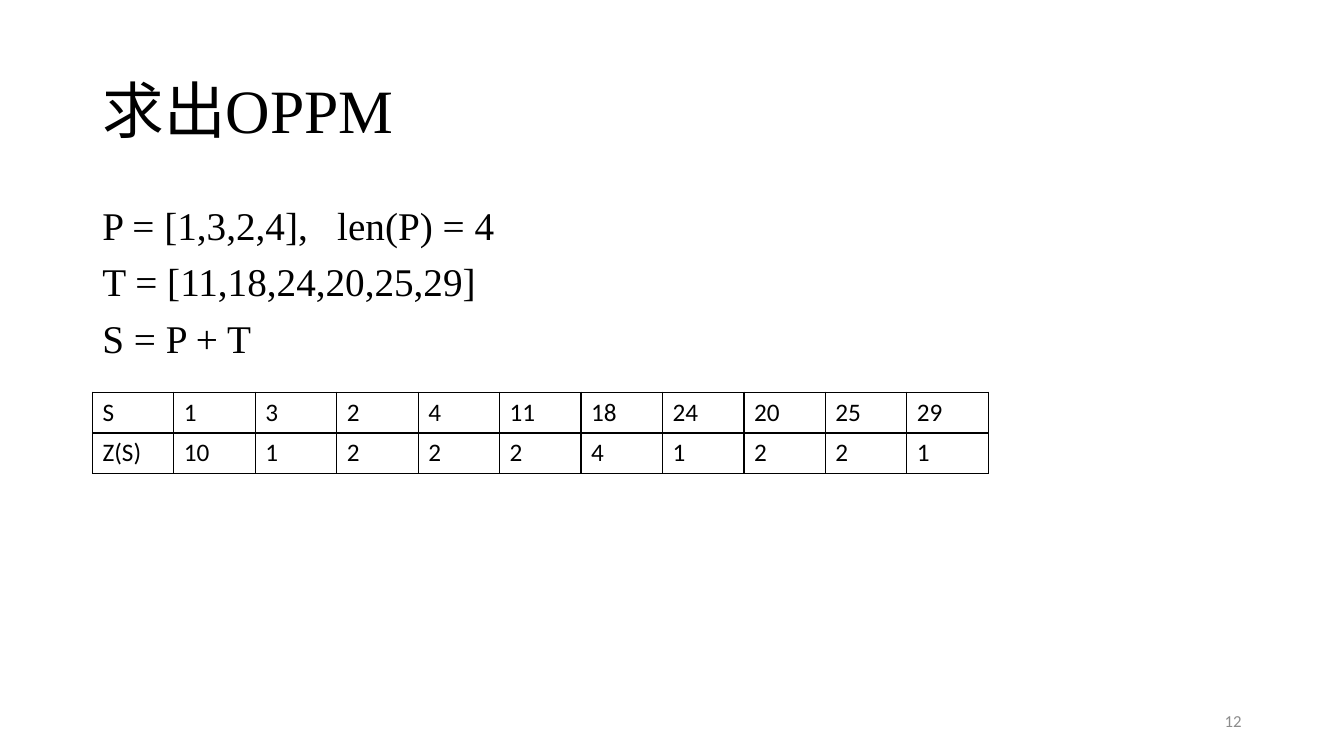
from dataclasses import dataclass
from typing import Any

from lxml import etree
from pptx import Presentation, util as u
from pptx.dml.color import RGBColor
from pptx.enum import text
from pptx.oxml import ns

BLACK = RGBColor(0x00, 0x00, 0x00)
GREY = RGBColor(0x8C, 0x8C, 0x8C)
SERIF, SANS, CJK = "Times New Roman", "Calibri", "Noto Sans CJK SC"
SLIDE_W, SLIDE_H = u.Inches(13.333), u.Inches(7.5)


@dataclass(frozen=True)
class Box:
    """A frame in percent of the slide's width and height."""
    left: float
    top: float
    width: float
    height: float

    def emu(self) -> tuple[int, int, int, int]:
        return (int(SLIDE_W * self.left / 100), int(SLIDE_H * self.top / 100),
                int(SLIDE_W * self.width / 100), int(SLIDE_H * self.height / 100))


@dataclass(frozen=True)
class Style:
    font: str
    size: float
    color: RGBColor = BLACK


TITLE_BOX = Box(6.88, 5.32, 86.25, 19.33)
BODY_BOX = Box(6.88, 26.67, 86.25, 63.45)
TABLE_BOX = Box(6.88, 51.87, 66.67, 10.8)
NUMBER_BOX = Box(70.63, 92.67, 22.5, 5.32)

TITLE_RUNS = [("求出", Style(CJK, 44)), ("OPPM", Style(SERIF, 44))]
BODY_LINES = ["P = [1,3,2,4],\tlen(P) = 4", "T = [11,18,24,20,25,29]", "S = P + T"]
ROWS = [
    ["S", 1, 3, 2, 4, 11, 18, 24, 20, 25, 29],
    ["Z(S)", 10, 1, 2, 2, 2, 4, 1, 2, 2, 1],
]


def add_run(p: Any, content: str, style: Style) -> None:
    r = p.add_run()
    r.text = content
    r.font.name, r.font.size = style.font, u.Pt(style.size)
    r.font.color.rgb = style.color
    if style.font == CJK:
        ea = etree.SubElement(r.font._element, ns.qn("a:ea"))
        ea.set("typeface", CJK)


def add_text_frame(s: Any, box: Box, anchor: Any) -> Any:
    tf = s.shapes.add_textbox(*box.emu()).text_frame
    tf.word_wrap = True
    tf.vertical_anchor = anchor
    return tf


def add_tab_stop(p: Any, inches: float) -> None:
    tabs = etree.SubElement(p._p.get_or_add_pPr(), ns.qn("a:tabLst"))
    etree.SubElement(tabs, ns.qn("a:tab"), pos=str(u.Inches(inches)), algn="l")


def outline_cell(cell: Any, color: RGBColor, points: float) -> None:
    tc_pr = cell._tc.get_or_add_tcPr()
    for i, side in enumerate(("lnL", "lnR", "lnT", "lnB")):
        ln = etree.Element(ns.qn(f"a:{side}"), w=str(u.Pt(points)))
        fill = etree.SubElement(ln, ns.qn("a:solidFill"))
        etree.SubElement(fill, ns.qn("a:srgbClr"), val=str(color))
        tc_pr.insert(i, ln)


def add_grid_table(s: Any, box: Box, rows: list[list], style: Style) -> None:
    n_rows, n_cols = len(rows), len(rows[0])
    table = s.shapes.add_table(n_rows, n_cols, *box.emu()).table
    table.first_row = table.horz_banding = False
    for i, row in enumerate(rows):
        for j, value in enumerate(row):
            cell = table.cell(i, j)
            cell.fill.background()
            outline_cell(cell, BLACK, 1)
            add_run(cell.text_frame.paragraphs[0], str(value), style)


def main() -> None:
    prs = Presentation()
    prs.slide_width, prs.slide_height = SLIDE_W, SLIDE_H
    s = prs.slides.add_slide(prs.slide_layouts[5])

    # Title
    title = s.shapes.title
    title.left, title.top, title.width, title.height = TITLE_BOX.emu()
    tf = title.text_frame
    tf.auto_size = text.MSO_AUTO_SIZE.NONE
    tf.vertical_anchor = text.MSO_ANCHOR.MIDDLE
    p = tf.paragraphs[0]
    p.alignment, p.line_spacing = text.PP_ALIGN.LEFT, 0.9
    for content, style in TITLE_RUNS:
        add_run(p, content, style)

    # Slide number
    tf = add_text_frame(s, NUMBER_BOX, text.MSO_ANCHOR.MIDDLE)
    p = tf.paragraphs[0]
    p.alignment = text.PP_ALIGN.RIGHT
    add_run(p, "12", Style(SANS, 12, GREY))

    # Definitions of P, T and S
    tf = add_text_frame(s, BODY_BOX, text.MSO_ANCHOR.TOP)
    for i, line in enumerate(BODY_LINES):
        p = tf.add_paragraph() if i else tf.paragraphs[0]
        p.line_spacing, p.space_before = 0.9, u.Pt(10)
        if "\t" in line:
            add_tab_stop(p, 2.33)
        add_run(p, line, Style(SERIF, 28))

    # Z values of S
    add_grid_table(s, TABLE_BOX, ROWS, Style(SANS, 18))

    prs.save("out.pptx")


if __name__ == "__main__":
    main()
